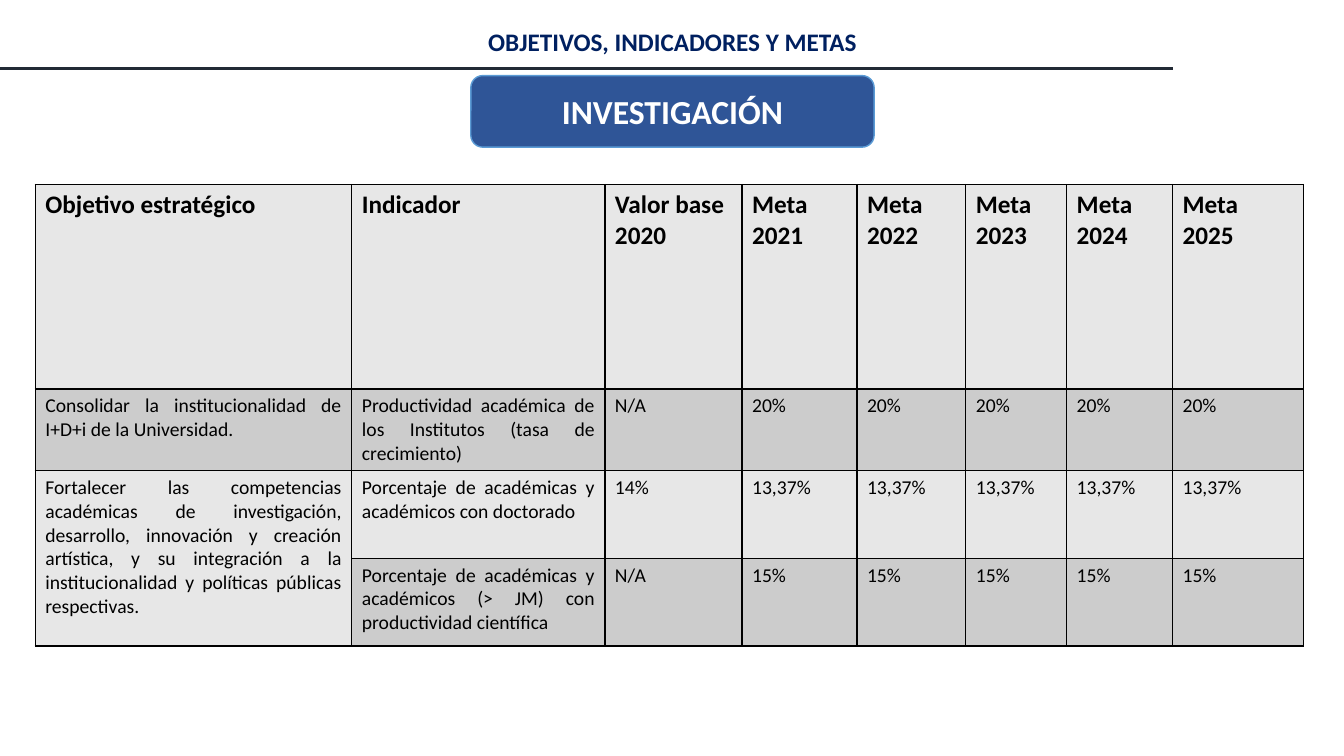
"""Build the slide of research objectives, indicators and targets."""
from lxml import etree
from pptx import Presentation
from pptx import util as u
from pptx.dml.color import RGBColor
from pptx.enum import shapes, text
from pptx.oxml import ns

FONT = "Calibri"
COLORS = {
    "navy": "002060", "rule": "222A35", "banner": "2F5597", "outline": "5B9BD5",
    "white": "FFFFFF", "black": "000000", "light": "E7E7E7", "dark": "CCCCCC",
}
YEARS = range(2021, 2026)
HEADER = ["Objetivo estratégico", "Indicador", "Valor base 2020"]
OBJECTIVES = [
    ("Consolidar la institucionalidad de I+D+i de la Universidad.",
     "Productividad académica de los Institutos (tasa de crecimiento)", "N/A", "20%"),
    ("Fortalecer las competencias académicas de investigación, desarrollo, innovación "
     "y creación artística, y su integración a la institucionalidad y políticas "
     "públicas respectivas.",
     "Porcentaje de académicas y académicos con doctorado", "14%", "13,37%"),
    ("", "Porcentaje de académicas y académicos (> JM) con productividad científica",
     "N/A", "15%"),
]
COLUMN_WIDTHS = [3.14, 2.51, 1.36, 1.14, 1.08, 1, 1.05, 1.3]
ROW_HEIGHTS = [2.03, 0.63, 0.87, 0.87]


def color(name):
    """Return a named colour."""
    return RGBColor.from_string(COLORS[name])


def paint(target, name):
    """Give a shape or cell a solid fill."""
    target.fill.solid()
    target.fill.fore_color.rgb = color(name)


def write(frame, content, size, color_name, bold=False, align=text.PP_ALIGN.LEFT):
    """Set and format the text of a frame."""
    frame.text = content
    paragraph = frame.paragraphs[0]
    paragraph.alignment = align
    for run in paragraph.runs:
        run.font.name = FONT
        run.font.size = u.Pt(size)
        run.font.bold = bold
        run.font.color.rgb = color(color_name)


def add_title(slide, content):
    """Place and format the title placeholder."""
    title = slide.shapes.title
    title.left, title.top = u.Inches(2.59), u.Inches(0.21)
    title.width, title.height = u.Inches(8.16), u.Inches(0.4)
    paint(title, "white")
    frame = title.text_frame
    write(frame, content, 18, "navy", True, text.PP_ALIGN.CENTER)
    frame.vertical_anchor = text.MSO_ANCHOR.TOP
    frame.auto_size = text.MSO_AUTO_SIZE.NONE


def add_rule(slide):
    """Draw the line under the title."""
    rule = slide.shapes.add_connector(
        shapes.MSO_CONNECTOR.STRAIGHT,
        u.Inches(11.63), u.Inches(0.68), u.Inches(-0.02), u.Inches(0.68))
    rule.line.color.rgb = color("rule")
    rule.line.width = u.Pt(2)
    etree.SubElement(rule._element.spPr, ns.qn("a:effectLst"))


def add_banner(slide, content):
    """Draw the rounded section banner."""
    banner = slide.shapes.add_shape(
        shapes.MSO_SHAPE.ROUNDED_RECTANGLE,
        u.Inches(4.67), u.Inches(0.75), u.Inches(4), u.Inches(0.71))
    banner.shadow.inherit = False
    paint(banner, "banner")
    banner.line.color.rgb = color("outline")
    banner.line.width = u.Pt(1)
    banner.text_frame.vertical_anchor = text.MSO_ANCHOR.MIDDLE
    write(banner.text_frame, content, 24, "white", True, text.PP_ALIGN.CENTER)


def add_borders(cell):
    """Give a cell thin black borders on all sides."""
    properties = cell._tc.get_or_add_tcPr()
    for side in ("lnL", "lnR", "lnT", "lnB"):
        line = etree.SubElement(properties, ns.qn(f"a:{side}"), w=str(u.Pt(1)))
        fill = etree.SubElement(line, ns.qn("a:solidFill"))
        etree.SubElement(fill, ns.qn("a:srgbClr"), val=COLORS["black"])


def format_cell(cell, content, row, column):
    """Fill, border and write one table cell."""
    add_borders(cell)
    paint(cell, "dark" if row % 2 else "light")
    header = row == 0
    justified = not header and column < 2
    align = text.PP_ALIGN.JUSTIFY if justified else text.PP_ALIGN.LEFT
    write(cell.text_frame, content, 18 if header else 14, "black", header, align)


def add_targets_table(slide):
    """Add the table of objectives and yearly targets."""
    rows = [HEADER + [f"Meta {year}" for year in YEARS]]
    for objective, indicator, base, target in OBJECTIVES:
        rows.append([objective, indicator, base] + [target] * len(YEARS))
    table = slide.shapes.add_table(
        len(rows), len(COLUMN_WIDTHS), u.Inches(0.35), u.Inches(1.83),
        u.Inches(sum(COLUMN_WIDTHS)), u.Inches(sum(ROW_HEIGHTS))).table
    for column, width in zip(table.columns, COLUMN_WIDTHS):
        column.width = u.Inches(width)
    for row, height in zip(table.rows, ROW_HEIGHTS):
        row.height = u.Inches(height)
    for row, contents in enumerate(rows):
        for column, content in enumerate(contents):
            format_cell(table.cell(row, column), content, row, column)
    table.cell(2, 0).merge(table.cell(3, 0))


def main():
    """Build and save the presentation."""
    presentation = Presentation()
    presentation.slide_width = u.Inches(13.33)
    presentation.slide_height = u.Inches(7.5)
    slide = presentation.slides.add_slide(presentation.slide_layouts[5])
    add_title(slide, "OBJETIVOS, INDICADORES Y METAS")
    add_rule(slide)
    add_banner(slide, "INVESTIGACIÓN")
    add_targets_table(slide)
    presentation.save("out.pptx")


if __name__ == "__main__":
    main()
